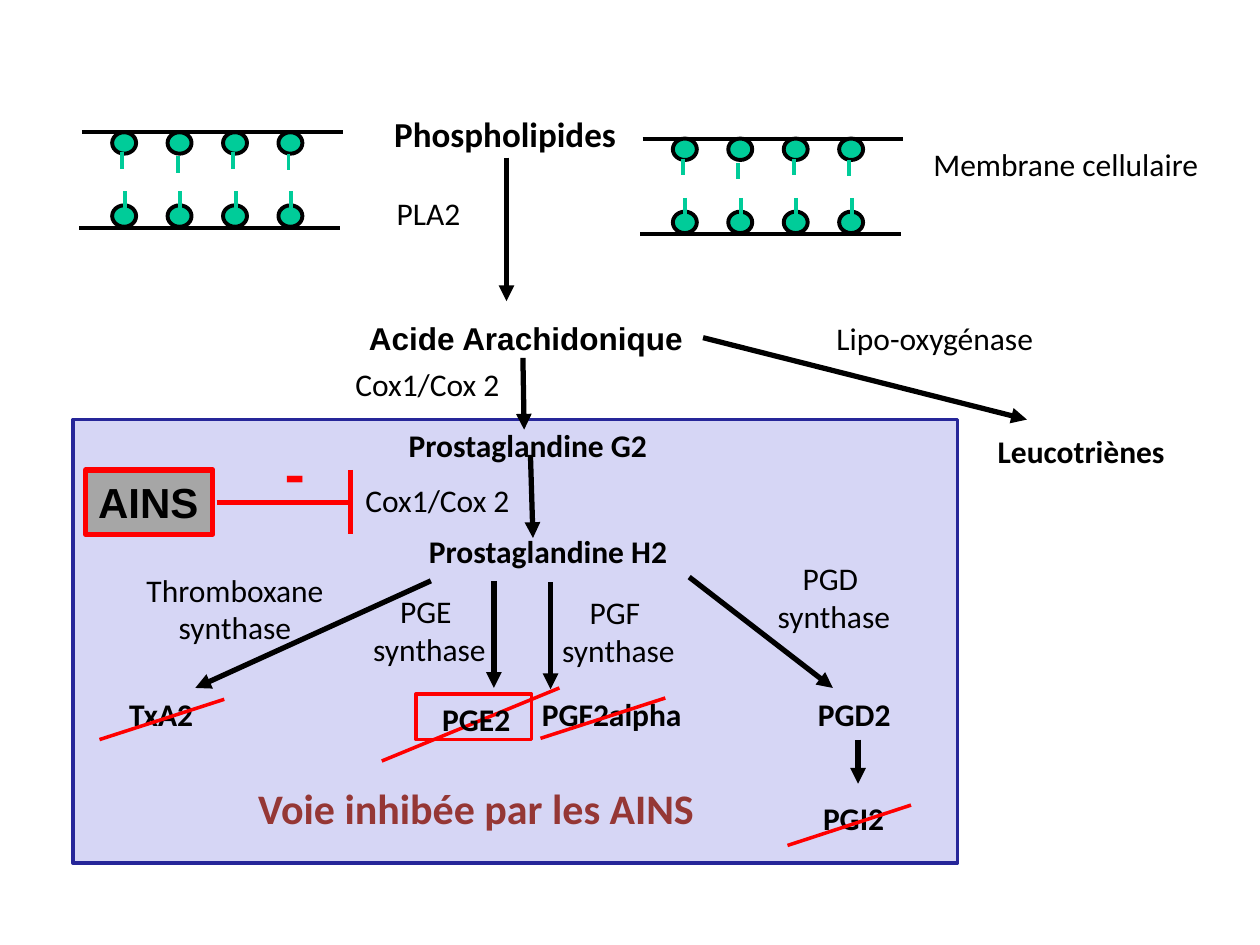
from typing import NamedTuple

from lxml import etree
from pptx import Presentation
from pptx.dml.color import RGBColor
from pptx.enum.shapes import MSO_CONNECTOR, MSO_SHAPE
from pptx.enum.text import MSO_AUTO_SIZE, PP_ALIGN
from pptx.oxml.ns import qn
from pptx.util import Inches, Pt

STRAIGHT = MSO_CONNECTOR.STRAIGHT
RECT, OVAL = MSO_SHAPE.RECTANGLE, MSO_SHAPE.OVAL
FIT = MSO_AUTO_SIZE.SHAPE_TO_FIT_TEXT
LEFT, CENTER = PP_ALIGN.LEFT, PP_ALIGN.CENTER

BLACK = RGBColor(0x00, 0x00, 0x00)
RED = RGBColor(0xFF, 0x00, 0x00)
GREEN = RGBColor(0x00, 0xCC, 0x99)
LAVENDER = RGBColor(0xD6, 0xD6, 0xF5)
NAVY = RGBColor(0x26, 0x26, 0x99)
GRAY = RGBColor(0xA6, 0xA6, 0xA6)
BROWN = RGBColor(0x95, 0x37, 0x35)


class Label(NamedTuple):
    text: str
    x: float
    y: float
    w: float
    h: float = 0.4
    bold: bool = False
    align: PP_ALIGN = CENTER
    wrap: bool = True
    size: int = 18
    color: RGBColor = BLACK
    font: str = "Calibri"


class Line(NamedTuple):
    x1: float
    y1: float
    x2: float
    y2: float


LABELS = [
    Label("Phospholipides", 3.03, 0.84, 1.98, 0.44, True, LEFT, False, 20),
    Label("Membrane cellulaire", 7.31, 1.1, 2.33, align=LEFT, wrap=False),
    Label("PLA2", 3.05, 1.49, 0.74, align=LEFT),
    Label("Acide Arachidonique", 2.83, 2.48, 2.72, bold=True, align=LEFT,
          wrap=False, font="Arial"),
    Label("Lipo-oxygénase", 6.54, 2.48, 1.78, align=LEFT, wrap=False),
    Label("Leucotriènes", 7.82, 3.38, 1.96, bold=True, align=LEFT),
    Label("Cox1/Cox 2 ", 2.48, 2.85, 1.88),
    Label("Prostaglandine G2", 3.11, 3.33, 2.16, bold=True),
    Label("Cox1/Cox 2 ", 2.64, 3.77, 1.72),
    Label("Prostaglandine H2", 3.27, 4.17, 2.16, bold=True),
    Label("Thromboxane synthase", 0.7, 4.48, 2.33, 0.71),
    Label("PGE\n synthase", 2.32, 4.65, 2.12, 0.71),
    Label("PGF\n synthase", 4.29, 4.66, 1.18, 0.71),
    Label("PGD\n synthase", 6.0, 4.39, 1.18, 0.71),
    Label("TxA2", 0.65, 5.47, 1.26, bold=True),
    Label("PGF2alpha", 4.13, 5.47, 1.45, bold=True),
    Label("PGD2", 6.15, 5.47, 1.26, bold=True),
    Label("PGI2", 5.79, 6.29, 1.97, bold=True),
    Label("Voie inhibée par les AINS", 0.61, 6.16, 6.34, 0.5, True,
          size=24, color=BROWN),
    Label("-", 2.17, 3.4, 0.45, 0.71, True, LEFT, size=36, color=RED),
]
PGE2 = Label("PGE2", 3.3, 5.51, 0.96, bold=True)
AINS = Label("AINS", 0.68, 3.73, 1.01, 0.51, True, LEFT, False, 24, font="Arial")

ARROWS = [
    Line(4.02, 1.25, 4.02, 2.39),  # phospholipids to arachidonic acid
    Line(5.58, 2.68, 8.15, 3.33),  # to leukotrienes
    Line(4.15, 2.84, 4.16, 3.41),  # to G2
    Line(4.21, 3.61, 4.23, 4.27),  # G2 to H2
    Line(3.42, 4.61, 1.55, 5.46),  # H2 to its four products
    Line(3.92, 4.61, 3.92, 5.46),
    Line(4.37, 4.62, 4.37, 5.47),
    Line(5.47, 4.58, 6.61, 5.46),
    Line(6.81, 5.87, 6.81, 6.22),  # PGD2 to PGI2
]
INHIBITION = [Line(1.72, 3.99, 2.78, 3.99), Line(2.78, 3.73, 2.78, 4.24)]
STRIKES = [
    Line(3.03, 6.04, 4.44, 5.46),
    Line(0.79, 5.87, 1.78, 5.55),
    Line(4.29, 5.86, 5.28, 5.54),
    Line(6.25, 6.71, 7.23, 6.39),
]
MEMBRANES = [(0.63, 1.05), (5.08, 1.1)]
LIPID_PITCH = 0.44
UPPER_TAIL_DROPS = [0.16, 0.19, 0.16, 0.17]


def add_line(shapes, line: Line, color: RGBColor, width: float,
             arrow: bool = False) -> None:
    s = shapes.add_connector(STRAIGHT, *(Inches(v) for v in line))
    s.line.color.rgb = color
    s.line.width = Pt(width)
    if arrow:
        ln = s.line._get_or_add_ln()
        etree.SubElement(ln, qn("a:tailEnd"), type="triangle")
    etree.SubElement(s._element.spPr, qn("a:effectLst"))


def add_box(shapes, kind, x: float, y: float, w: float, h: float,
            fill: RGBColor | None, line: RGBColor, width: float):
    sp = shapes.add_shape(kind, Inches(x), Inches(y), Inches(w), Inches(h))
    sp.shadow.inherit = False
    if fill is None:
        sp.fill.background()
    else:
        sp.fill.solid()
        sp.fill.fore_color.rgb = fill
    sp.line.color.rgb = line
    sp.line.width = Pt(width)
    return sp


def write(tf, label: Label) -> None:
    tf.text = label.text
    tf.word_wrap = label.wrap
    tf.auto_size = FIT
    for p in tf.paragraphs:
        p.alignment = label.align
        for r in p.runs:
            r.font.name = label.font
            r.font.size = Pt(label.size)
            r.font.bold = label.bold
            r.font.color.rgb = label.color


def add_label(shapes, label: Label) -> None:
    box = shapes.add_textbox(Inches(label.x), Inches(label.y),
                             Inches(label.w), Inches(label.h))
    write(box.text_frame, label)


def add_membrane(shapes, x: float, y: float) -> None:
    """Two leaflets, each with four lipids."""
    for left, top in ((x + 0.02, y), (x, y + 0.76)):
        add_line(shapes, Line(left, top, left + 2.07, top), BLACK, 2.25)
    for i, drop in enumerate(UPPER_TAIL_DROPS):
        head = x + 0.26 + i * LIPID_PITCH
        for top in (y, y + 0.58):
            add_box(shapes, OVAL, head, top, 0.19, 0.17, GREEN, BLACK, 2.25)
        for tail, top in ((head + 0.08, y + drop), (head + 0.1, y + 0.47)):
            add_line(shapes, Line(tail, top, tail, top + 0.13), GREEN, 2.25)


def main() -> None:
    prs = Presentation()
    prs.slide_width, prs.slide_height = Inches(10), Inches(7.5)
    shapes = prs.slides.add_slide(prs.slide_layouts[6]).shapes

    # Inhibited pathway frame and cell membrane
    add_box(shapes, RECT, 0.58, 3.33, 7.02, 3.52, LAVENDER, NAVY, 2)
    for x, y in MEMBRANES:
        add_membrane(shapes, x, y)

    # Reaction cascade
    for label in LABELS:
        add_label(shapes, label)
    for arrow in ARROWS:
        add_line(shapes, arrow, BLACK, 3, arrow=True)

    # AINS inhibition
    sp = add_box(shapes, RECT, AINS.x, AINS.y, AINS.w, AINS.h, GRAY, RED, 3)
    write(sp.text_frame, AINS)
    for bar in INHIBITION:
        add_line(shapes, bar, RED, 3)

    # Blocked products
    for strike in STRIKES:
        add_line(shapes, strike, RED, 2)
    add_label(shapes, PGE2)
    add_box(shapes, RECT, 3.3, 5.51, 0.92, 0.36, None, RED, 2)

    prs.save("out.pptx")


if __name__ == "__main__":
    main()
